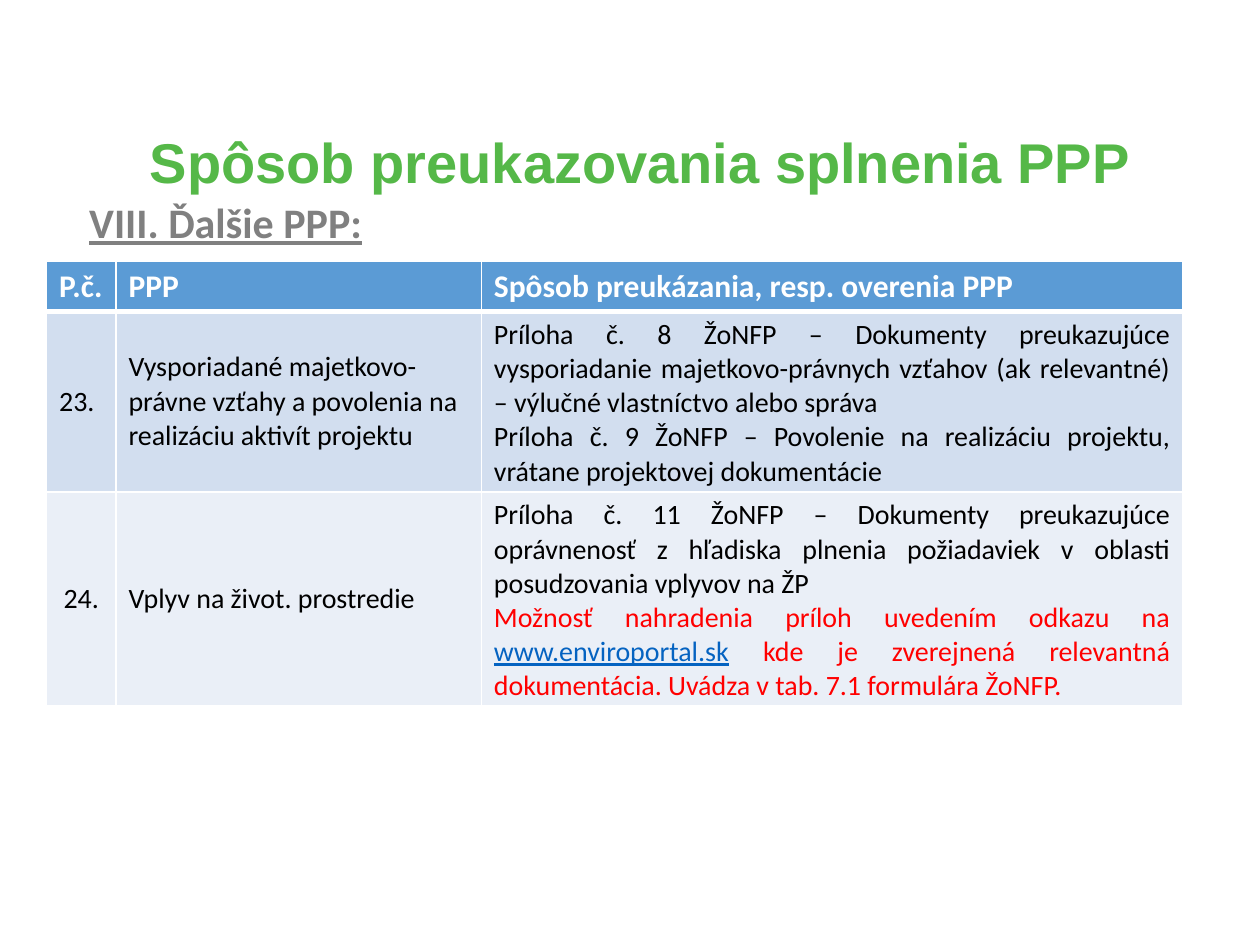
"""Build the slide on ways of proving that the PPP conditions are met."""
from dataclasses import dataclass

from lxml.etree import SubElement
from pptx import Presentation
from pptx.dml.color import RGBColor
from pptx.enum.text import MSO_ANCHOR, PP_ALIGN
from pptx.oxml.ns import qn
from pptx.util import Inches, Pt


@dataclass(frozen=True)
class Theme:
    title_font: str = "Arial"
    body_font: str = "Calibri"
    title_size: int = 32
    subtitle_size: int = 24
    header_size: int = 18
    body_size: int = 16
    green: str = "55B848"
    grey: str = "808080"
    white: str = "FFFFFF"
    black: str = "000000"
    red: str = "FF0000"
    link: str = "0563C1"
    header_fill: str = "5B9BD5"
    row_fills: tuple = ("D2DEEF", "EAEFF7")


def style(run, font, size, color, bold=False, underline=False):
    run.font.name, run.font.size = font, Pt(size)
    run.font.bold, run.font.underline = bold, underline
    run.font.color.rgb = RGBColor.from_string(color)


def dress_cell(cell, fill, bottom_width):
    properties = cell._tc.get_or_add_tcPr()
    for side, width in (("L", 1), ("R", 1), ("T", 1), ("B", bottom_width)):
        border = SubElement(properties, qn(f"a:ln{side}"), w=str(Pt(width)))
        SubElement(SubElement(border, qn("a:solidFill")), qn("a:srgbClr"), val=theme.white)
    cell.fill.solid()
    cell.fill.fore_color.rgb = RGBColor.from_string(fill)


theme = Theme()
deck = Presentation()
deck.slide_width, deck.slide_height = Inches(10), Inches(7.5)
slide = deck.slides.add_slide(deck.slide_layouts[6])

headings = [
    ("Spôsob preukazovania splnenia PPP", (0.61, 0.97, 8.95, 0.68), MSO_ANCHOR.MIDDLE,
     PP_ALIGN.CENTER, 0.9, (theme.title_font, theme.title_size, theme.green, True)),
    ("VIII. Ďalšie PPP:", (0.61, 1.51, 8.53, 0.5), MSO_ANCHOR.TOP,
     PP_ALIGN.JUSTIFY, 1.0, (theme.body_font, theme.subtitle_size, theme.grey, True, True)),
]
for wording, place, anchor, alignment, spacing, look in headings:
    frame = slide.shapes.add_textbox(*map(Inches, place)).text_frame
    frame.word_wrap = True
    frame.vertical_anchor = anchor
    frame.text = wording
    heading = frame.paragraphs[0]
    heading.alignment, heading.line_spacing = alignment, spacing
    style(heading.runs[0], *look)

column_widths = (0.55, 2.9, 5.57)
row_heights = (0.4, 1.43, 1.7)
conditions = slide.shapes.add_table(
    len(row_heights), len(column_widths), Inches(0.37), Inches(2.07),
    Inches(sum(column_widths)), Inches(sum(row_heights))).table
for column, width in zip(conditions.columns, column_widths):
    column.width = Inches(width)
for row, height in zip(conditions.rows, row_heights):
    row.height = Inches(height)

header = ("P.č.", "PPP", "Spôsob preukázania, resp. overenia PPP")
for cell, wording in zip(conditions.rows[0].cells, header):
    dress_cell(cell, theme.header_fill, 3)
    cell.text = wording
    style(cell.text_frame.paragraphs[0].runs[0],
          theme.body_font, theme.header_size, theme.white, True)

requirements = [
    ("23.", PP_ALIGN.LEFT,
     "Vysporiadané majetkovo-právne vzťahy a povolenia na realizáciu aktivít projektu",
     [[("Príloha č. 8 ŽoNFP – Dokumenty preukazujúce vysporiadanie majetkovo-právnych "
        "vzťahov (ak relevantné) – výlučné vlastníctvo alebo správa", theme.black)],
      [("Príloha č. 9 ŽoNFP – Povolenie na realizáciu projektu, vrátane projektovej "
        "dokumentácie", theme.black)]]),
    ("24.", PP_ALIGN.CENTER, "Vplyv na život. prostredie",
     [[("Príloha č. 11 ŽoNFP – Dokumenty preukazujúce oprávnenosť z hľadiska plnenia "
        "požiadaviek v oblasti posudzovania vplyvov na ŽP", theme.black)],
      [("Možnosť nahradenia príloh uvedením odkazu na ", theme.red),
       ("www.enviroportal.sk", theme.link),
       (" kde je zverejnená relevantná dokumentácia. Uvádza v tab. 7.1 formulára ŽoNFP.",
        theme.red)]]),
]
for index, (number, number_alignment, condition, proof) in enumerate(requirements):
    contents = [
        ([[(number, theme.black)]], number_alignment),
        ([[(condition, theme.black)]], PP_ALIGN.LEFT),
        (proof, PP_ALIGN.JUSTIFY),
    ]
    for cell, (paragraphs, alignment) in zip(conditions.rows[index + 1].cells, contents):
        dress_cell(cell, theme.row_fills[index], 1)
        cell.vertical_anchor = MSO_ANCHOR.MIDDLE
        cell.text = "\n".join("" for _ in paragraphs)
        for paragraph, pieces in zip(cell.text_frame.paragraphs, paragraphs):
            paragraph.alignment = alignment
            for wording, color in pieces:
                run = paragraph.add_run()
                run.text = wording
                style(run, theme.body_font, theme.body_size, color,
                      underline=color == theme.link)

deck.save("out.pptx")
